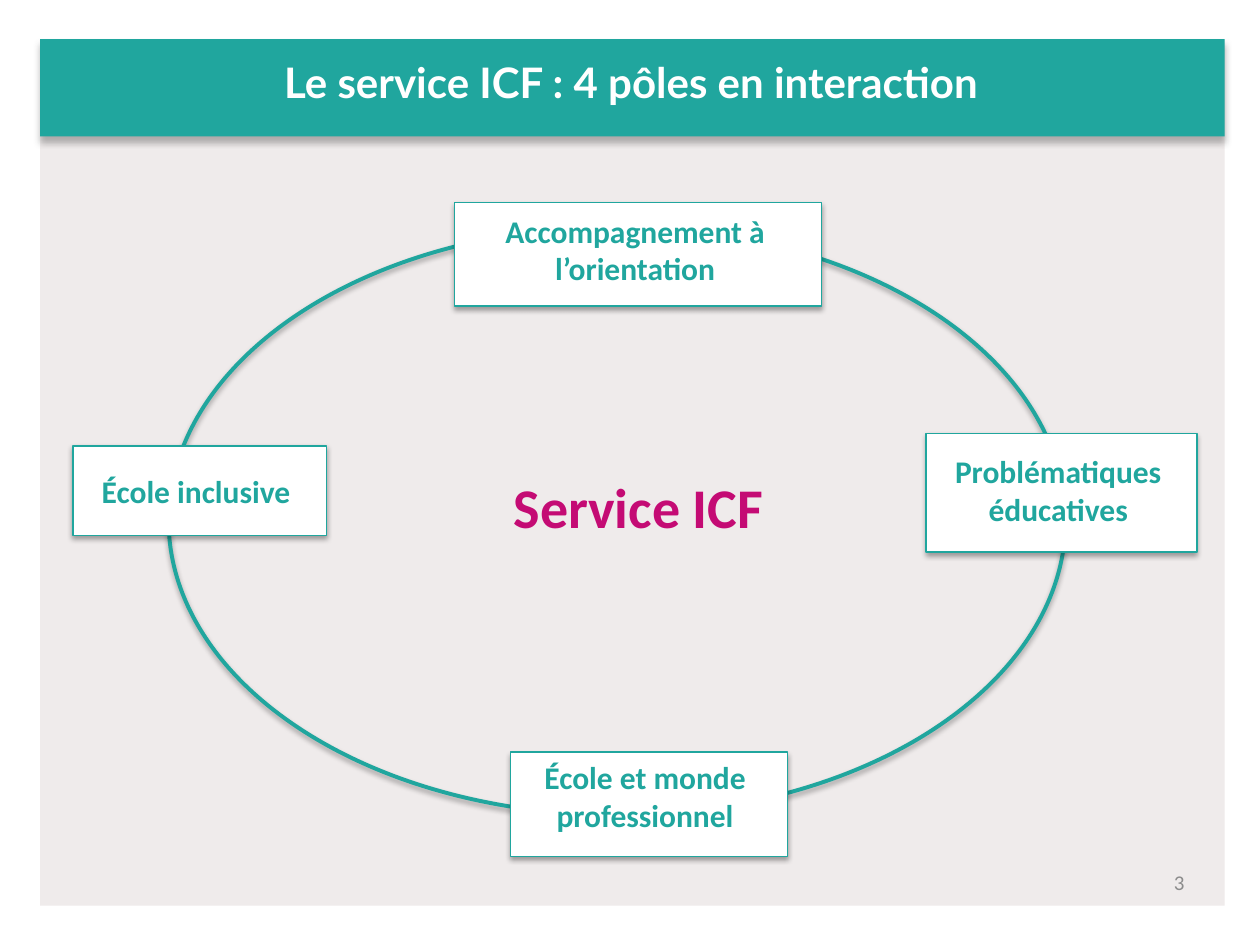
from dataclasses import dataclass

from lxml import etree
from pptx import Presentation
from pptx.dml.color import RGBColor
from pptx.enum.shapes import MSO_SHAPE
from pptx.enum.text import MSO_ANCHOR, MSO_AUTO_SIZE, PP_ALIGN
from pptx.oxml.ns import qn
from pptx.util import Cm, Pt

RECT, OVAL = MSO_SHAPE.RECTANGLE, MSO_SHAPE.OVAL
LEFT, CENTER, RIGHT = PP_ALIGN.LEFT, PP_ALIGN.CENTER, PP_ALIGN.RIGHT
TOP, MIDDLE = MSO_ANCHOR.TOP, MSO_ANCHOR.MIDDLE
NO_FIT = MSO_AUTO_SIZE.NONE


@dataclass(frozen=True)
class Theme:
    teal: str = "20A69E"
    pink: str = "C40B74"
    white: str = "FFFFFF"
    panel: str = "EFEBEB"
    grey: str = "8C8C8C"
    title_font: str = "Lato"
    body_font: str = "Calibri"
    title_size: float = 24
    core_size: float = 32
    label_size: float = 18
    number_size: float = 12
    ring_width: float = 2.25
    card_width: float = 0.75
    bar_shadow: tuple = ("595959", 43, 4, 3, 96)
    soft_shadow: tuple = ("000000", 35, 3.1, 1.8, 90)


THEME = Theme()


def add_shadow(sp, color, alpha, blur, dist, angle):
    effects = sp.element.spPr.find(qn("a:effectLst"))
    shadow = etree.SubElement(effects, qn("a:outerShdw"), blurRad=str(Pt(blur)),
                              dist=str(Pt(dist)), dir=str(angle * 60000),
                              algn="ctr", rotWithShape="0")
    clr = etree.SubElement(shadow, qn("a:srgbClr"), val=color)
    etree.SubElement(clr, qn("a:alpha"), val=str(alpha * 1000))


def add_block(slide, kind, box, fill=None, line=None, width=0, shadow=None):
    sp = slide.shapes.add_shape(kind, *map(Cm, box))
    sp.shadow.inherit = False
    if fill:
        sp.fill.solid()
        sp.fill.fore_color.rgb = RGBColor.from_string(fill)
    else:
        sp.fill.background()
    if line:
        sp.line.color.rgb = RGBColor.from_string(line)
        sp.line.width = Pt(width)
    else:
        sp.line.fill.background()
    if shadow:
        add_shadow(sp, *shadow)


def write(sp, text, size, color, align=CENTER, bold=True,
          name=THEME.body_font, anchor=TOP):
    tf = sp.text_frame
    tf.word_wrap = True
    tf.auto_size = NO_FIT
    tf.vertical_anchor = anchor
    p = tf.paragraphs[0]
    p.text = text
    p.alignment = align
    p.font.name, p.font.size, p.font.bold = name, Pt(size), bold
    p.font.color.rgb = RGBColor.from_string(color)


def add_label(slide, box, text, size, color, **style):
    write(slide.shapes.add_textbox(*map(Cm, box)), text, size, color, **style)


def header(slide, box, text):
    x, y, w, h = box
    add_block(slide, RECT, box, fill=THEME.teal, shadow=THEME.bar_shadow)
    title = slide.shapes.title
    title.left, title.top = Cm(x + 2.31), Cm(y + 0.23)
    title.width, title.height = Cm(w - 4.68), Cm(h - 0.66)
    write(title, text, THEME.title_size, THEME.white, name=THEME.title_font)
    title.element.getparent().append(title.element)


def cycle(slide, box, core, poles):
    x, y, w, h = box
    label_w = 7.37
    add_block(slide, OVAL, box, line=THEME.teal, width=THEME.ring_width,
              shadow=THEME.soft_shadow)
    for text, (cx, cy, cw, ch), (tx, ty, th), align in poles:
        add_block(slide, RECT, (x + cx, y + cy, cw, ch), fill=THEME.white,
                  line=THEME.teal, width=THEME.card_width, shadow=THEME.soft_shadow)
        add_label(slide, (x + tx, y + ty, label_w, th), text,
                  THEME.label_size, THEME.teal, align=align)
    add_label(slide, (x + 5.79, y + 4.83, label_w, 1.63), core,
              THEME.core_size, THEME.pink)


def page_number(slide, box, number):
    add_label(slide, box, number, THEME.number_size, THEME.grey,
              align=RIGHT, bold=False, anchor=MIDDLE)


def main():
    prs = Presentation()
    prs.slide_width, prs.slide_height = Cm(25.4), Cm(19.05)
    slide = prs.slides.add_slide(prs.slide_layouts[5])
    poles = [
        ("École inclusive", (-1.93, 4.42, 5.11, 1.8), (-1.6, 4.83, 1.02), LEFT),
        ("École et monde professionnel", (6.89, 10.59, 5.59, 2.11),
         (5.92, 10.59, 1.8), CENTER),
        ("Problématiques éducatives", (15.27, 4.17, 5.46, 2.39),
         (14.25, 4.42, 1.8), CENTER),
        ("Accompagnement à l’orientation", (5.77, -0.48, 7.39, 2.08),
         (5.72, -0.43, 1.8), CENTER),
    ]
    add_block(slide, RECT, (0.81, 0.81, 23.88, 17.45), fill=THEME.panel)
    header(slide, (0.81, 0.79, 23.88, 1.96), "Le service ICF : 4 pôles en interaction")
    cycle(slide, (3.4, 4.57, 18.08, 11.86), "Service ICF", poles)
    page_number(slide, (23.16, 17.27, 0.97, 1.02), "3")
    prs.save("out.pptx")


if __name__ == "__main__":
    main()
